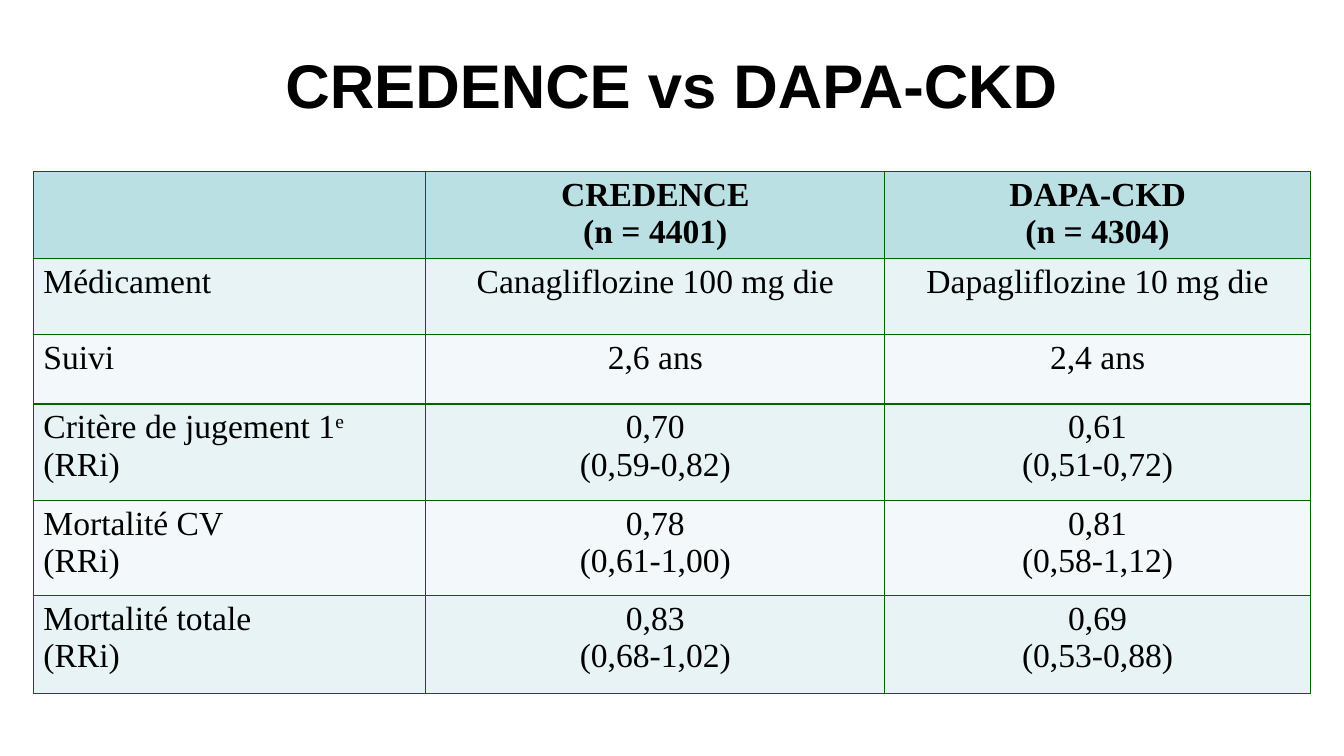
from pptx import Presentation
from pptx.dml.color import RGBColor
from pptx.enum.text import MSO_ANCHOR, PP_ALIGN
from pptx.oxml import parse_xml
from pptx.oxml.ns import nsdecls
from pptx.util import Cm, Pt

COLORS = {"text": "000000", "border": "006300", "header": "BBE0E3",
          "odd": "E7F3F4", "even": "F3F9FA"}
COL_WIDTHS = [9.89, 11.57, 10.72]
ROW_HEIGHTS = [2.19, 1.91, 1.76, 2.43, 2.4, 2.46]
ROWS = [
    ["", "CREDENCE\n(n = 4401)", "DAPA-CKD\n(n = 4304)"],
    ["Médicament", "Canagliflozine 100 mg die", "Dapagliflozine 10 mg die"],
    ["Suivi", "2,6 ans", "2,4 ans"],
    ["Critère de jugement 1\n(RRi)", "0,70\n(0,59-0,82)", "0,61\n(0,51-0,72)"],
    ["Mortalité CV\n(RRi)", "0,78\n(0,61-1,00)", "0,81\n(0,58-1,12)"],
    ["Mortalité totale\n(RRi)", "0,83\n(0,68-1,02)", "0,69\n(0,53-0,88)"],
]


def format_run(r, font, size, bold):
    r.font.name = font
    r.font.size = Pt(size)
    r.font.bold = bold
    r.font.color.rgb = RGBColor.from_string(COLORS["text"])


def add_borders(cell):
    tc_pr = cell._tc.get_or_add_tcPr()
    for side in ("lnL", "lnR", "lnT", "lnB"):
        tc_pr.append(parse_xml(
            f'<a:{side} {nsdecls("a")} w="12700"><a:solidFill>'
            f'<a:srgbClr val="{COLORS["border"]}"/></a:solidFill></a:{side}>'))


prs = Presentation()
prs.slide_width = Cm(33.87)
prs.slide_height = Cm(19.05)
s = prs.slides.add_slide(prs.slide_layouts[5])

title = s.shapes.title
title.left, title.top, title.width, title.height = Cm(0.84), Cm(0.53), Cm(32.18), Cm(3.18)
tf = title.text_frame
tf.text = "CREDENCE vs DAPA-CKD"
tf.vertical_anchor = MSO_ANCHOR.MIDDLE
p = tf.paragraphs[0]
p.alignment = PP_ALIGN.CENTER
format_run(p.runs[0], "Arial", 44, True)

table = s.shapes.add_table(len(ROWS), len(COL_WIDTHS), Cm(0.84), Cm(4.32),
                           Cm(sum(COL_WIDTHS)), Cm(sum(ROW_HEIGHTS))).table
for column, width in zip(table.columns, COL_WIDTHS):
    column.width = Cm(width)
for row, height in zip(table.rows, ROW_HEIGHTS):
    row.height = Cm(height)

for i, texts in enumerate(ROWS):
    fill = "header" if i == 0 else "odd" if i % 2 else "even"
    for j, text in enumerate(texts):
        cell = table.cell(i, j)
        add_borders(cell)
        cell.fill.solid()
        cell.fill.fore_color.rgb = RGBColor.from_string(COLORS[fill])
        cell.text_frame.text = text
        for p in cell.text_frame.paragraphs:
            p.alignment = PP_ALIGN.CENTER if j else PP_ALIGN.LEFT
            for r in p.runs:
                format_run(r, "Times New Roman", 24, i == 0)

r = table.cell(3, 0).text_frame.paragraphs[0].add_run()
r.text = "e"
format_run(r, "Times New Roman", 24, False)
r.font._element.set("baseline", "30000")

prs.save("out.pptx")
